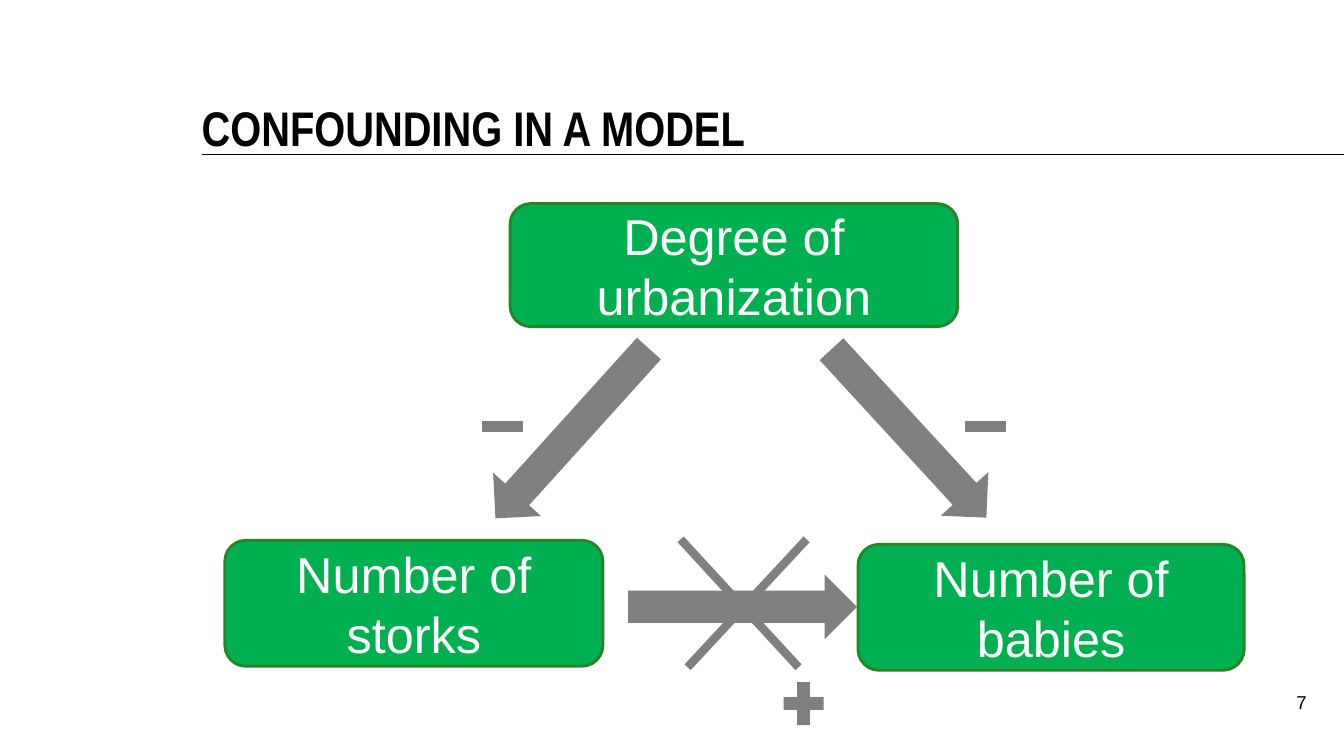
from dataclasses import dataclass

import lxml.etree
import pptx
import pptx.dml.color
import pptx.enum.shapes
import pptx.enum.text
import pptx.oxml.ns
import pptx.util

RGBColor = pptx.dml.color.RGBColor
MSO_SHAPE = pptx.enum.shapes.MSO_SHAPE
PP_ALIGN = pptx.enum.text.PP_ALIGN
MSO_ANCHOR = pptx.enum.text.MSO_ANCHOR

BLACK = RGBColor(0x00, 0x00, 0x00)
WHITE = RGBColor(0xFF, 0xFF, 0xFF)
GREEN = RGBColor(0x00, 0xB0, 0x50)
DARK_GREEN = RGBColor(0x26, 0x84, 0x26)
GRAY = RGBColor(0x80, 0x80, 0x80)

EMU_PER_PX = 9144
ARROW_WIDTH, ARROW_HEIGHT = 227, 64


@dataclass(frozen=True)
class Box:
    left: int
    top: int
    width: int
    height: int


@dataclass(frozen=True)
class Variable:
    text: str
    box: Box


@dataclass(frozen=True)
class Symbol:
    kind: MSO_SHAPE
    box: Box
    rotation: float = 0


@dataclass(frozen=True)
class Stroke:
    x1: int
    y1: int
    x2: int
    y2: int
    color: RGBColor
    weight: int


def arrow(left: int, top: int, rotation: float = 0) -> Symbol:
    return Symbol(MSO_SHAPE.RIGHT_ARROW, Box(left, top, ARROW_WIDTH, ARROW_HEIGHT), rotation)


def minus(left: int) -> Symbol:
    return Symbol(MSO_SHAPE.MATH_MINUS, Box(left, 400, 55, 46))


VARIABLES = [
    Variable("Degree of urbanization", Box(506, 202, 444, 122)),
    Variable("Number of storks", Box(223, 536, 375, 125)),
    Variable("Number of babies", Box(851, 540, 383, 125)),
]
SYMBOLS = [
    arrow(454, 398, 132.1),
    arrow(623, 570),
    arrow(788, 398, 47.4),
    Symbol(MSO_SHAPE.MATH_PLUS, Box(770, 669, 54, 58)),
    minus(471),
    minus(950),
]
STROKES = [
    Stroke(200, 153, 1333, 153, BLACK, 1),
    Stroke(800, 535, 682, 662, GRAY, 6),
    Stroke(792, 662, 675, 535, GRAY, 6),
]


def px(value: int) -> pptx.util.Emu:
    return pptx.util.Emu(value * EMU_PER_PX)


def frame(box: Box) -> tuple[pptx.util.Emu, ...]:
    return px(box.left), px(box.top), px(box.width), px(box.height)


def set_font(p, name: str, size: float, color: RGBColor, bold: bool = False) -> None:
    p.font.name = name
    p.font.size = pptx.util.Pt(size)
    p.font.color.rgb = color
    p.font.bold = bold


def format_title(sp) -> None:
    sp.left, sp.top, sp.width, sp.height = frame(Box(200, 75, 1092, 80))
    tf = sp.text_frame
    tf.text = "CONFOUNDING IN A MODEL"
    tf.auto_size = pptx.enum.text.MSO_AUTO_SIZE.NONE
    tf.vertical_anchor = MSO_ANCHOR.BOTTOM
    tf.margin_left = tf.margin_right = tf.margin_top = tf.margin_bottom = 0
    p = tf.paragraphs[0]
    p.alignment = PP_ALIGN.LEFT
    p.line_spacing = pptx.util.Pt(33.3)
    p.space_before = 0
    set_font(p, "Arial Narrow", 34.7, BLACK, bold=True)


def add_page_number(slide, number: int) -> None:
    tf = slide.shapes.add_textbox(*frame(Box(1241, 675, 55, 52))).text_frame
    tf.word_wrap = True
    tf.margin_right = 0
    p = tf.paragraphs[0]
    p.text = str(number)
    p.alignment = PP_ALIGN.RIGHT
    p.line_spacing = pptx.util.Pt(20)
    set_font(p, "Arial", 13.3, BLACK)


def add_variable(slide, variable: Variable) -> None:
    sp = slide.shapes.add_shape(MSO_SHAPE.ROUNDED_RECTANGLE, *frame(variable.box))
    sp.shadow.inherit = False
    sp.fill.solid()
    sp.fill.fore_color.rgb = GREEN
    sp.line.color.rgb = DARK_GREEN
    sp.line.width = pptx.util.Pt(2)
    tf = sp.text_frame
    tf.word_wrap = True
    tf.vertical_anchor = MSO_ANCHOR.MIDDLE
    p = tf.paragraphs[0]
    p.text = variable.text
    p.alignment = PP_ALIGN.CENTER
    set_font(p, "Arial", 36, WHITE)


def add_symbol(slide, symbol: Symbol) -> None:
    sp = slide.shapes.add_shape(symbol.kind, *frame(symbol.box))
    sp.rotation = symbol.rotation
    sp.shadow.inherit = False
    sp.fill.solid()
    sp.fill.fore_color.rgb = GRAY
    sp.line.fill.background()


def add_stroke(slide, stroke: Stroke) -> None:
    line = slide.shapes.add_connector(
        pptx.enum.shapes.MSO_CONNECTOR.STRAIGHT,
        px(stroke.x1), px(stroke.y1), px(stroke.x2), px(stroke.y2),
    )
    line.line.color.rgb = stroke.color
    line.line.width = pptx.util.Pt(stroke.weight)
    lxml.etree.SubElement(line._element.spPr, pptx.oxml.ns.qn("a:effectLst"))


def main() -> None:
    prs = pptx.Presentation()
    prs.slide_width, prs.slide_height = px(1333), px(750)
    slide = prs.slides.add_slide(prs.slide_layouts.get_by_name("Title Only"))
    format_title(slide.shapes.title)
    add_page_number(slide, 7)
    for variable in VARIABLES:
        add_variable(slide, variable)
    for symbol in SYMBOLS:
        add_symbol(slide, symbol)
    for stroke in STROKES:
        add_stroke(slide, stroke)
    prs.save("out.pptx")


if __name__ == "__main__":
    main()
